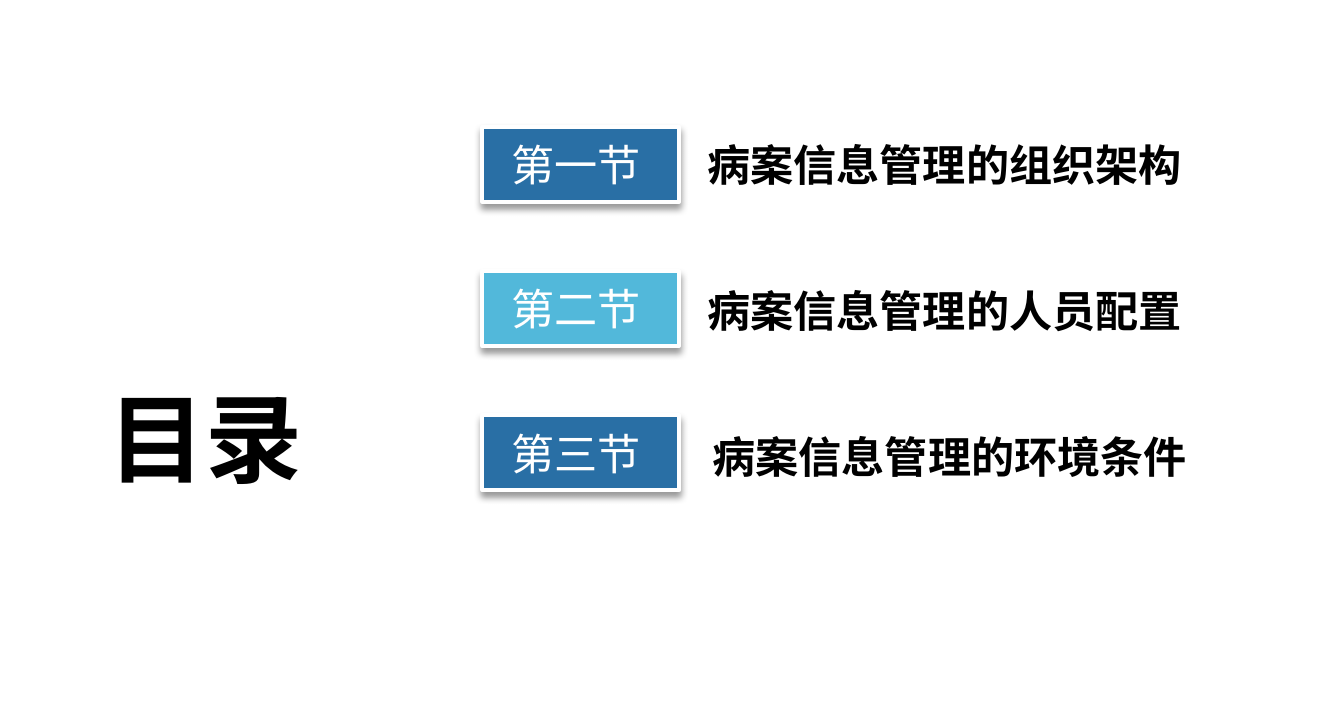
"""Build a contents slide with three numbered sections."""
from dataclasses import dataclass

from lxml import etree
from pptx import Presentation
from pptx import util as u
from pptx.dml.color import RGBColor
from pptx.enum import shapes, text
from pptx.oxml import ns


@dataclass(frozen=True)
class Theme:
    """Colours, fonts and type sizes of the slide."""
    blue: str = "296FA5"
    sky: str = "52B8DA"
    white: str = "FFFFFF"
    black: str = "000000"
    latin: str = "Times New Roman"
    asian: str = "Noto Sans CJK SC"
    title: int = 54
    body: int = 24


THEME = Theme()
TOP, STEP = 0.98, 1.115
SECTIONS = [
    ("第一节 ", "病案信息管理的组织架构", THEME.blue, 5.37, 1.02),
    ("第二节 ", "病案信息管理的人员配置", THEME.sky, 5.37, 2.15),
    ("第三节 ", "病案信息管理的环境条件", THEME.blue, 5.41, 3.28),
]


def write(frame, words, size=THEME.body, color=THEME.black, bold=False,
          face=THEME.latin, align=text.PP_ALIGN.LEFT, wrap=True):
    """Put formatted words into a text frame."""
    frame.word_wrap = wrap
    para = frame.paragraphs[0]
    para.alignment = align
    run = para.add_run()
    run.text = words
    font = run.font
    font.size, font.bold, font.name = u.Pt(size), bold, face
    font.color.rgb = RGBColor.from_string(color)
    asian = etree.SubElement(run._r.get_or_add_rPr(), ns.qn("a:ea"))
    asian.set("typeface", THEME.asian)


def label(slide, words, left, top, width, height, **style):
    """Add a text box that grows with its words."""
    box = slide.shapes.add_textbox(*map(u.Inches, (left, top, width, height)))
    box.text_frame.auto_size = text.MSO_AUTO_SIZE.SHAPE_TO_FIT_TEXT
    write(box.text_frame, words, **style)


def shade(shape):
    """Give a shape a soft shadow below it."""
    shape.shadow.inherit = False
    effects = shape._element.spPr.find(ns.qn("a:effectLst"))
    outer = etree.SubElement(effects, ns.qn("a:outerShdw"), blurRad=str(u.Pt(4)),
                             dist=str(u.Pt(3)), dir="5400000", rotWithShape="0")
    color = etree.SubElement(outer, ns.qn("a:srgbClr"), val=THEME.black)
    etree.SubElement(color, ns.qn("a:alpha"), val="40000")


def badge(slide, words, top, fill):
    """Add a framed section number."""
    box = slide.shapes.add_shape(shapes.MSO_SHAPE.RECTANGLE, u.Inches(3.73),
                                 u.Inches(top), u.Inches(1.52), u.Inches(0.58))
    box.fill.solid()
    box.fill.fore_color.rgb = RGBColor.from_string(fill)
    box.line.color.rgb = RGBColor.from_string(THEME.white)
    box.line.width = u.Pt(2.25)
    shade(box)
    box.text_frame.vertical_anchor = text.MSO_ANCHOR.MIDDLE
    write(box.text_frame, words, color=THEME.white, align=text.PP_ALIGN.CENTER)


def main():
    """Build and save the slide."""
    deck = Presentation()
    deck.slide_width, deck.slide_height = u.Inches(10.39), u.Inches(5.62)
    slide = deck.slides.add_slide(deck.slide_layouts[6])
    label(slide, "目录", 0.74, 2.88, 1.79, 1.01, size=THEME.title,
          bold=True, face=THEME.asian, wrap=False)
    for row, (number, name, fill, left, top) in enumerate(SECTIONS):
        badge(slide, number, TOP + row * STEP, fill)
        label(slide, name, left, top, 4.48, 0.5, bold=True)
    deck.save("out.pptx")


if __name__ == "__main__":
    main()
